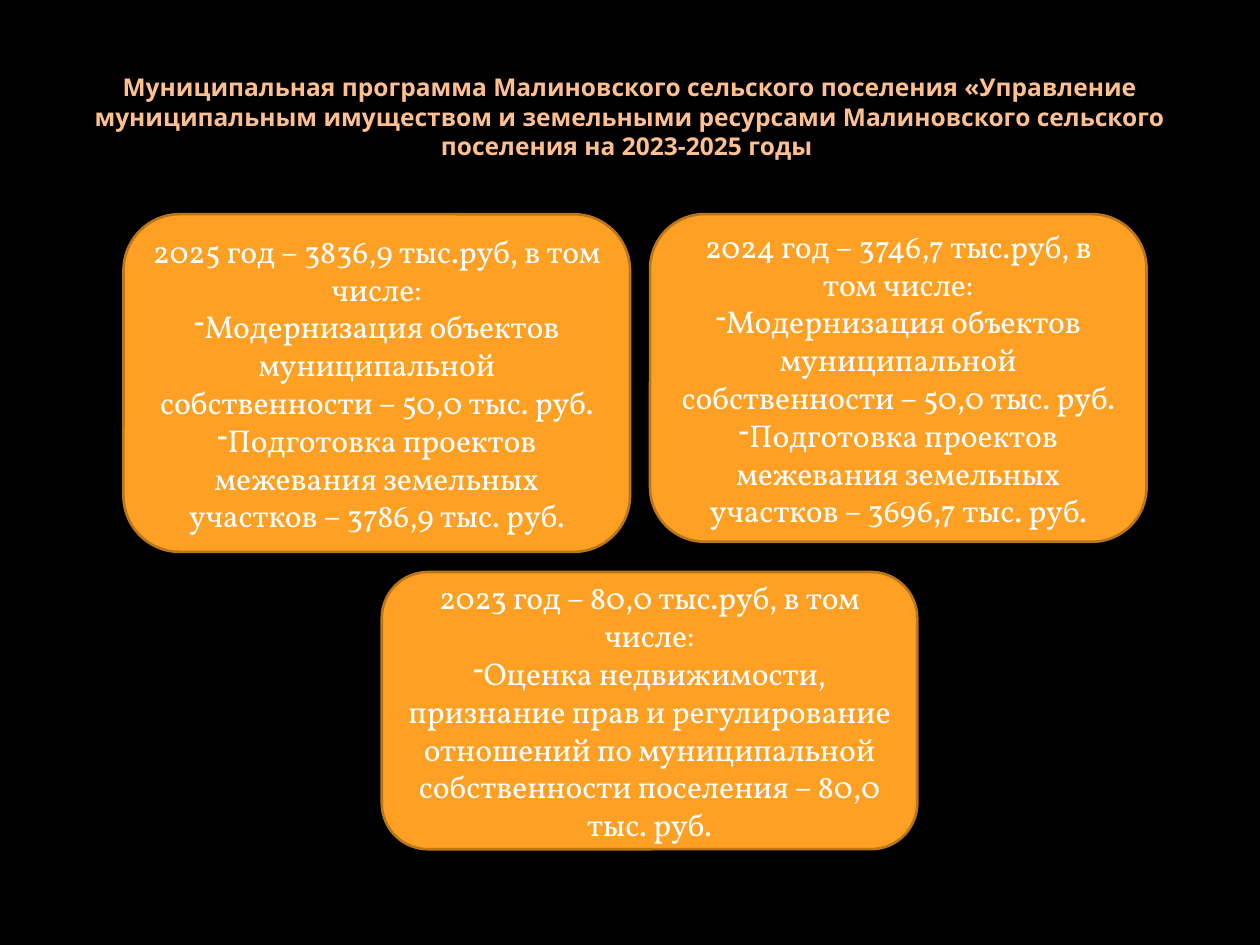
from dataclasses import dataclass

from lxml import etree
from pptx import Presentation
from pptx.dml.color import RGBColor
from pptx.enum.shapes import MSO_SHAPE
from pptx.enum.text import MSO_ANCHOR, PP_ALIGN
from pptx.oxml.ns import qn
from pptx.util import Inches, Pt

ROUNDED = MSO_SHAPE.ROUNDED_RECTANGLE
CENTER = PP_ALIGN.CENTER
MIDDLE = MSO_ANCHOR.MIDDLE


@dataclass(frozen=True)
class Theme:
    background: RGBColor = RGBColor.from_string("000000")
    title: RGBColor = RGBColor.from_string("FFC091")
    card: RGBColor = RGBColor.from_string("FDA023")
    border: RGBColor = RGBColor.from_string("BB761A")
    text: RGBColor = RGBColor.from_string("FFFFFF")
    title_font: str = "Noto Sans"
    body_font: str = "Vollkorn"
    title_size: Pt = Pt(14)
    body_size: Pt = Pt(18)
    border_width: Pt = Pt(1.5)


class SlideBuilder:
    def __init__(self, slide, theme):
        self.slide = slide
        self.theme = theme
        fill = slide.background.fill
        fill.solid()
        fill.fore_color.rgb = theme.background

    def style(self, paragraph, font_name, size, color, bold=False):
        paragraph.alignment = CENTER
        font = paragraph.font
        font.name, font.size, font.bold = font_name, size, bold
        font.color.rgb = color

    def add_title(self, text, left, top, width, height):
        title = self.slide.shapes.title
        title.left, title.top = Inches(left), Inches(top)
        title.width, title.height = Inches(width), Inches(height)
        frame = title.text_frame
        frame.text = text
        frame.vertical_anchor = MIDDLE
        theme = self.theme
        self.style(frame.paragraphs[0], theme.title_font, theme.title_size,
                   theme.title, bold=True)

    def add_bullet(self, paragraph):
        """Mark the paragraph with a dash, leaving wrapped lines centred."""
        properties = paragraph._p.get_or_add_pPr()
        properties.set("marL", "0")
        properties.set("indent", "0")
        bullet = etree.Element(qn("a:buChar"), char="-")
        properties.insert_element_before(
            bullet, "a:tabLst", "a:defRPr", "a:extLst")

    def add_card(self, heading, items, left, top, width, height):
        theme = self.theme
        card = self.slide.shapes.add_shape(
            ROUNDED, Inches(left), Inches(top), Inches(width), Inches(height))
        card.shadow.inherit = False
        card.fill.solid()
        card.fill.fore_color.rgb = theme.card
        card.line.color.rgb = theme.border
        card.line.width = theme.border_width
        frame = card.text_frame
        frame.word_wrap = True
        frame.vertical_anchor = MIDDLE
        frame.text = "\n".join([heading, *items])
        for paragraph in frame.paragraphs:
            self.style(paragraph, theme.body_font, theme.body_size, theme.text)
        for paragraph in frame.paragraphs[1:]:
            self.add_bullet(paragraph)


MODERNIZATION = "Модернизация объектов муниципальной собственности – 50,0 тыс. руб."
SURVEYING = "Подготовка проектов межевания земельных участков – {} тыс. руб."
VALUATION = ("Оценка недвижимости, признание прав и регулирование отношений "
             "по муниципальной собственности поселения – 80,0 тыс. руб.")

# year, total, items, (left, top, width, height)
PROGRAMME_YEARS = [
    (2025, "3836,9", [MODERNIZATION, SURVEYING.format("3786,9")],
     (0.98, 1.7, 4.02, 2.68)),
    (2024, "3746,7", [MODERNIZATION, SURVEYING.format("3696,7")],
     (5.16, 1.7, 3.94, 2.6)),
    (2023, "80,0", [VALUATION], (3.03, 4.54, 4.25, 2.2)),
]


def main():
    presentation = Presentation()
    presentation.slide_width = Inches(10)
    presentation.slide_height = Inches(7.5)
    slide = presentation.slides.add_slide(presentation.slide_layouts[5])
    builder = SlideBuilder(slide, Theme())
    builder.add_title(
        "Муниципальная программа Малиновского сельского поселения «Управление "
        "муниципальным имуществом и земельными ресурсами Малиновского "
        "сельского поселения на 2023-2025 годы ", 0.5, 0.3, 9, 1.25)
    for year, total, items, box in PROGRAMME_YEARS:
        heading = f"{year} год – {total} тыс.руб, в том числе:"
        builder.add_card(heading, items, *box)
    presentation.save("out.pptx")


if __name__ == "__main__":
    main()
